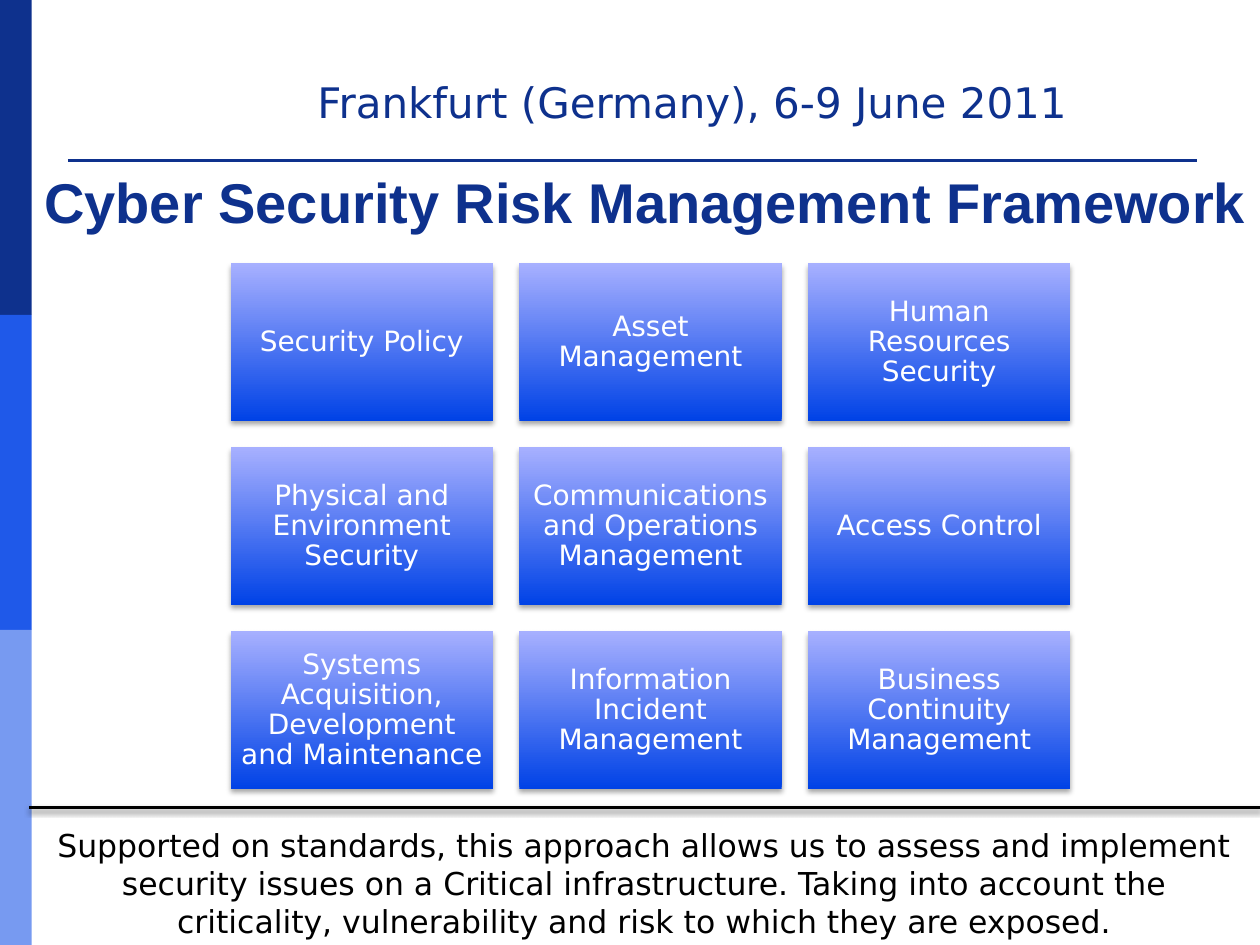
from dataclasses import dataclass

from lxml import etree
from pptx import Presentation
from pptx import util as u
from pptx.dml.color import RGBColor
from pptx.enum import shapes, text
from pptx.oxml import ns

NAVY = RGBColor(0x0E, 0x31, 0x8D)
BLUE = RGBColor(0x1F, 0x59, 0xE9)
LIGHT_BLUE = RGBColor(0x77, 0x9A, 0xF1)
TILE_BOTTOM = RGBColor(0x00, 0x42, 0xE6)
TILE_TOP = RGBColor(0xA7, 0xB0, 0xFF)
WHITE = RGBColor(0xFF, 0xFF, 0xFF)
BLACK = RGBColor(0x00, 0x00, 0x00)

BAR_WIDTH, BAR_HEIGHT = 0.64, 6.35
TILE_WIDTH, TILE_HEIGHT, TILE_GAP = 5.29, 3.18, 0.53
GRID_LEFT, GRID_TOP, GRID_COLUMNS = 4.65, 5.31, 3

BAR_COLORS = (NAVY, BLUE, LIGHT_BLUE)
TOPICS = (
    "Security Policy",
    "Asset Management",
    "Human Resources Security",
    "Physical and Environment Security",
    "Communications and Operations Management",
    "Access Control",
    "Systems Acquisition, Development and Maintenance",
    "Information Incident Management",
    "Business Continuity Management",
)


@dataclass
class Box:
    """A rectangle in centimetres."""
    left: float
    top: float
    width: float
    height: float

    def lengths(self) -> tuple:
        return tuple(u.Cm(v) for v in (self.left, self.top, self.width, self.height))


def write(shape, content: str, *, size: float, color: RGBColor, font="DejaVu Sans",
          bold=False, align=text.PP_ALIGN.LEFT, anchor=text.MSO_ANCHOR.TOP,
          spacing=1.0, margins=(0.25, 0.13, 0.25, 0.13)) -> None:
    """Fill a shape with one paragraph; margins are left, top, right, bottom."""
    frame = shape.text_frame
    frame.word_wrap = True
    frame.auto_size = text.MSO_AUTO_SIZE.NONE
    frame.vertical_anchor = anchor
    (frame.margin_left, frame.margin_top,
     frame.margin_right, frame.margin_bottom) = (u.Cm(m) for m in margins)
    paragraph = frame.paragraphs[0]
    paragraph.alignment = align
    paragraph.line_spacing = spacing
    run = paragraph.add_run()
    run.text = content
    run.font.name = font
    run.font.size = u.Pt(size)
    run.font.bold = bold
    run.font.color.rgb = color


def add_shadow(shape, opacity: int, blur: float, distance: float) -> None:
    """Add a black shadow falling straight down."""
    effects = etree.SubElement(shape._element.spPr, ns.qn("a:effectLst"))
    shadow = etree.SubElement(
        effects, ns.qn("a:outerShdw"), blurRad=str(u.Pt(blur)),
        dist=str(u.Pt(distance)), dir="5400000", rotWithShape="0")
    color = etree.SubElement(shadow, ns.qn("a:srgbClr"), val=str(BLACK))
    etree.SubElement(color, ns.qn("a:alpha"), val=str(opacity * 1000))


def add_rectangle(slide, box: Box):
    shape = slide.shapes.add_shape(shapes.MSO_SHAPE.RECTANGLE, *box.lengths())
    shape.line.fill.background()
    return shape


def add_bar(slide, box: Box, color: RGBColor) -> None:
    bar = add_rectangle(slide, box)
    bar.fill.solid()
    bar.fill.fore_color.rgb = color
    bar.shadow.inherit = False


def add_tile(slide, box: Box, topic: str) -> None:
    tile = add_rectangle(slide, box)
    tile.fill.gradient()
    tile.fill.gradient_angle = 90
    for stop, color in zip(tile.fill.gradient_stops, (TILE_BOTTOM, TILE_TOP)):
        stop.color.rgb = color
    add_shadow(tile, 35, 3.1, 1.8)
    write(tile, topic, size=16, color=WHITE, align=text.PP_ALIGN.CENTER,
          anchor=text.MSO_ANCHOR.MIDDLE, spacing=0.9, margins=(0.18,) * 4)


def add_header_rule(slide, box: Box) -> None:
    """Add a one-cell table that shows only its bottom border."""
    table = slide.shapes.add_table(1, 1, *box.lengths()).table
    table.first_row = table.horz_banding = False
    cell = table.cell(0, 0)
    cell.margin_top = cell.margin_bottom = 0
    etree.SubElement(cell.text_frame.paragraphs[0]._p, ns.qn("a:endParaRPr"), sz="800")
    properties = cell._tc.get_or_add_tcPr()
    for side in ("lnL", "lnR", "lnT"):
        border = etree.SubElement(properties, ns.qn(f"a:{side}"), w="0")
        etree.SubElement(border, ns.qn("a:noFill"))
    border = etree.SubElement(properties, ns.qn("a:lnB"), w=str(u.Pt(2.25)))
    fill = etree.SubElement(border, ns.qn("a:solidFill"))
    etree.SubElement(fill, ns.qn("a:srgbClr"), val=str(NAVY))
    cell.fill.background()


def main() -> None:
    presentation = Presentation()
    presentation.slide_width = u.Cm(25.4)
    presentation.slide_height = u.Cm(19.05)
    slide = presentation.slides.add_slide(presentation.slide_layouts[5])

    # Side bars
    for index, color in enumerate(BAR_COLORS):
        add_bar(slide, Box(0, index * BAR_HEIGHT, BAR_WIDTH, BAR_HEIGHT), color)

    # Header and title
    add_header_rule(slide, Box(1.37, 2.72, 22.76, 0.51))
    header = slide.shapes.add_textbox(*Box(6.15, 1.42, 16.71, 1.27).lengths())
    write(header, "Frankfurt (Germany), 6-9 June 2011", size=24, color=NAVY)
    title = slide.shapes.title
    title.left, title.top, title.width, title.height = Box(0.64, 3.23, 24.76, 1.65).lengths()
    write(title, "Cyber Security Risk Management Framework", size=32, color=NAVY,
          font="Arial", bold=True, anchor=text.MSO_ANCHOR.MIDDLE)

    # Topic grid
    for index, topic in enumerate(TOPICS):
        row, column = divmod(index, GRID_COLUMNS)
        add_tile(slide, Box(GRID_LEFT + column * (TILE_WIDTH + TILE_GAP),
                            GRID_TOP + row * (TILE_HEIGHT + TILE_GAP),
                            TILE_WIDTH, TILE_HEIGHT), topic)

    # Closing statement below a rule
    rule = slide.shapes.add_connector(shapes.MSO_CONNECTOR.STRAIGHT, u.Cm(0.58),
                                      u.Cm(16.28), u.Cm(25.4), u.Cm(16.28))
    rule.line.color.rgb = BLACK
    rule.line.width = u.Pt(2)
    add_shadow(rule, 38, 3.1, 1.6)
    statement = slide.shapes.add_textbox(*Box(0.58, 16.28, 24.82, 2.18).lengths())
    write(statement,
          "Supported on standards, this approach allows us to assess and implement "
          "security issues on a Critical infrastructure. Taking into account the "
          "criticality, vulnerability and risk to which they are exposed.",
          size=18, color=BLACK, align=text.PP_ALIGN.CENTER,
          margins=(0.25, 0.38, 0.25, 0.13))

    presentation.save("out.pptx")


if __name__ == "__main__":
    main()
